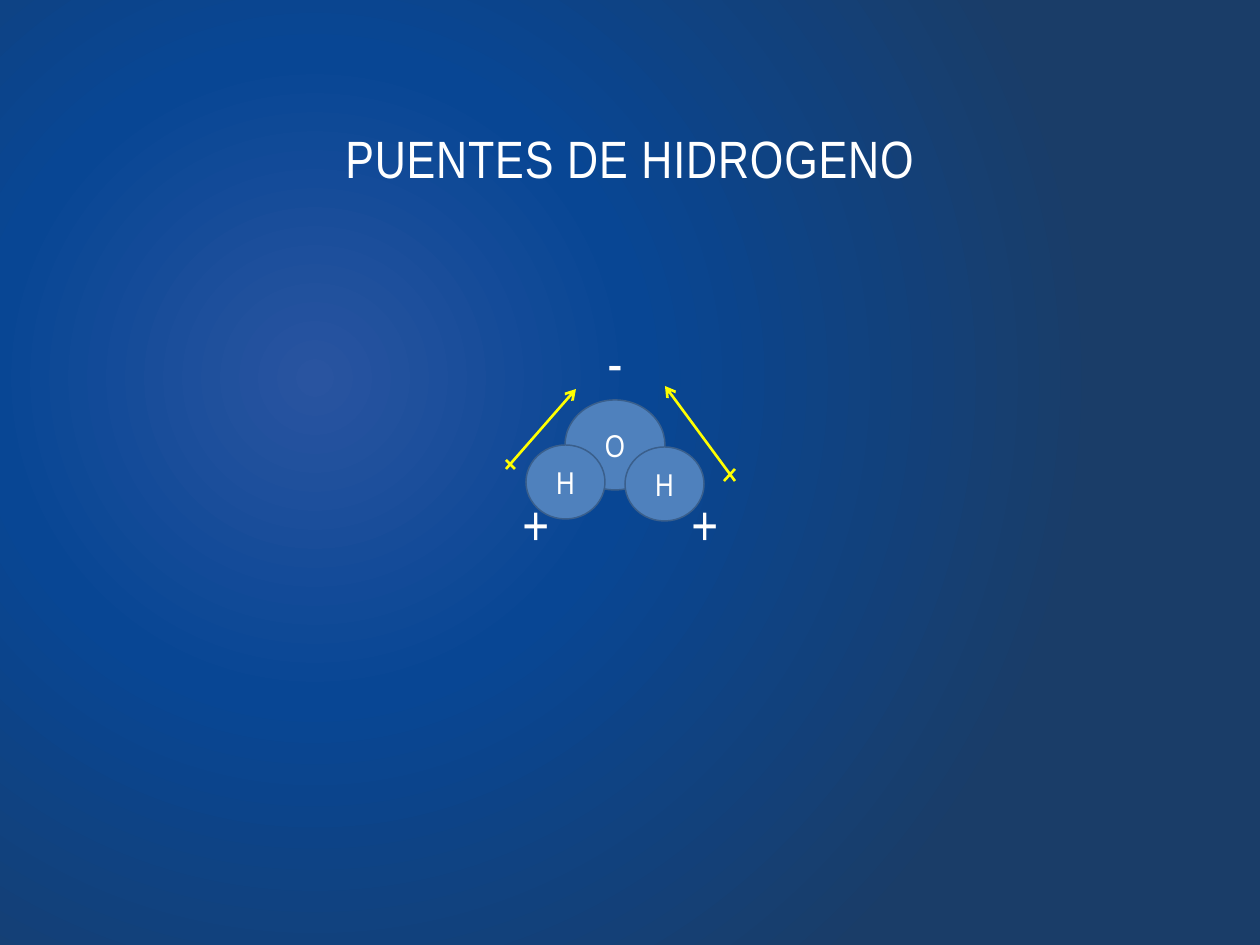
"""Build the hydrogen bond slide with a polar water molecule."""
import pptx
import pptx.dml.color
import pptx.enum.shapes
import pptx.enum.text
import pptx.oxml
import pptx.oxml.ns
import pptx.util

PX = 914400 / 126
THEME = {
    "font": "Arial Narrow", "text": "FFFFFF", "atom": "4F81BD", "outline": "3A5F8C",
    "dipole": "FFFF00", "title_size": 30, "atom_size": 18, "charge_size": 32,
    "outline_width": 0.85, "dipole_width": 1.5,
    "background": [(0, "2954A0"), (41, "084694"), (100, "1A3D68")],
}
TITLE = ("PUENTES DE HIDROGENO", (84, 38, 1092, 157))
ATOMS = [
    ("O", (565, 400, 100, 90)),
    ("H", (526, 445, 79, 74)),
    ("H", (625, 447, 79, 74)),
]
DIPOLES = [((506, 469), (576, 389)), ((735, 481), (665, 386))]
CROSS_STROKES = [((506, 460), (515, 469)), ((735, 469), (724, 481))]
CHARGES = [
    ("-", (595, 321, 40, 81)),
    ("+", (510, 483, 53, 81)),
    ("+", (679, 483, 53, 81)),
]


def emu(lengths):
    return [round(length * PX) for length in lengths]


def color(name):
    return pptx.dml.color.RGBColor.from_string(THEME[name])


def write(shape, text, size, align=None):
    shape.text_frame.text = text
    paragraph = shape.text_frame.paragraphs[0]
    paragraph.alignment = align
    font = paragraph.runs[0].font
    font.name = THEME["font"]
    font.size = pptx.util.Pt(THEME[size])
    font.color.rgb = color("text")
    return font


def paint_background(slide):
    slide.background.fill.solid()
    stops = "".join(
        f'<a:gs pos="{position * 1000}"><a:srgbClr val="{value}"/></a:gs>'
        for position, value in THEME["background"])
    gradient = pptx.oxml.parse_xml(
        f'<a:gradFill {pptx.oxml.ns.nsdecls("a")} rotWithShape="1"><a:gsLst>{stops}</a:gsLst>'
        '<a:path path="circle"><a:fillToRect l="50000" t="80000" r="100000" b="100000"/>'
        '</a:path></a:gradFill>')
    properties = slide.element.find(".//" + pptx.oxml.ns.qn("p:bgPr"))
    properties.replace(properties[0], gradient)


def add_title(slide):
    text, box = TITLE
    title = slide.shapes.title
    title.left, title.top, title.width, title.height = emu(box)
    write(title, text, "title_size", pptx.enum.text.PP_ALIGN.CENTER)
    title.text_frame.vertical_anchor = pptx.enum.text.MSO_ANCHOR.BOTTOM
    title.text_frame.auto_size = pptx.enum.text.MSO_AUTO_SIZE.NONE
    run = title.text_frame.paragraphs[0].runs[0]
    run.font.bold = False
    run._r.get_or_add_rPr().set("spc", "50")


def add_atom(slide, text, box):
    atom = slide.shapes.add_shape(pptx.enum.shapes.MSO_SHAPE.OVAL, *emu(box))
    atom.shadow.inherit = False
    atom.fill.solid()
    atom.fill.fore_color.rgb = color("atom")
    atom.line.color.rgb = color("outline")
    atom.line.width = pptx.util.Pt(THEME["outline_width"])
    atom.text_frame.vertical_anchor = pptx.enum.text.MSO_ANCHOR.MIDDLE
    write(atom, text, "atom_size", pptx.enum.text.PP_ALIGN.CENTER)


def add_line(slide, start, end, arrow=False):
    line = slide.shapes.add_connector(
        pptx.enum.shapes.MSO_CONNECTOR.STRAIGHT, *emu(start + end))
    line.line.color.rgb = color("dipole")
    line.line.width = pptx.util.Pt(THEME["dipole_width"])
    namespace = pptx.oxml.ns.nsdecls("a")
    if arrow:
        line.line._get_or_add_ln().append(
            pptx.oxml.parse_xml(f'<a:tailEnd {namespace} type="arrow"/>'))
    line.element.spPr.append(pptx.oxml.parse_xml(f"<a:effectLst {namespace}/>"))


def add_charge(slide, text, box):
    charge = slide.shapes.add_textbox(*emu(box))
    charge.text_frame.word_wrap = False
    charge.text_frame.auto_size = pptx.enum.text.MSO_AUTO_SIZE.SHAPE_TO_FIT_TEXT
    write(charge, text, "charge_size")


def main():
    presentation = pptx.Presentation()
    presentation.slide_width, presentation.slide_height = emu((1260, 945))
    slide = presentation.slides.add_slide(presentation.slide_layouts[5])
    paint_background(slide)
    add_title(slide)
    for text, box in ATOMS:
        add_atom(slide, text, box)
    for start, end in DIPOLES:
        add_line(slide, start, end, arrow=True)
    for start, end in CROSS_STROKES:
        add_line(slide, start, end)
    for text, box in CHARGES:
        add_charge(slide, text, box)
    presentation.save("out.pptx")


if __name__ == "__main__":
    main()
